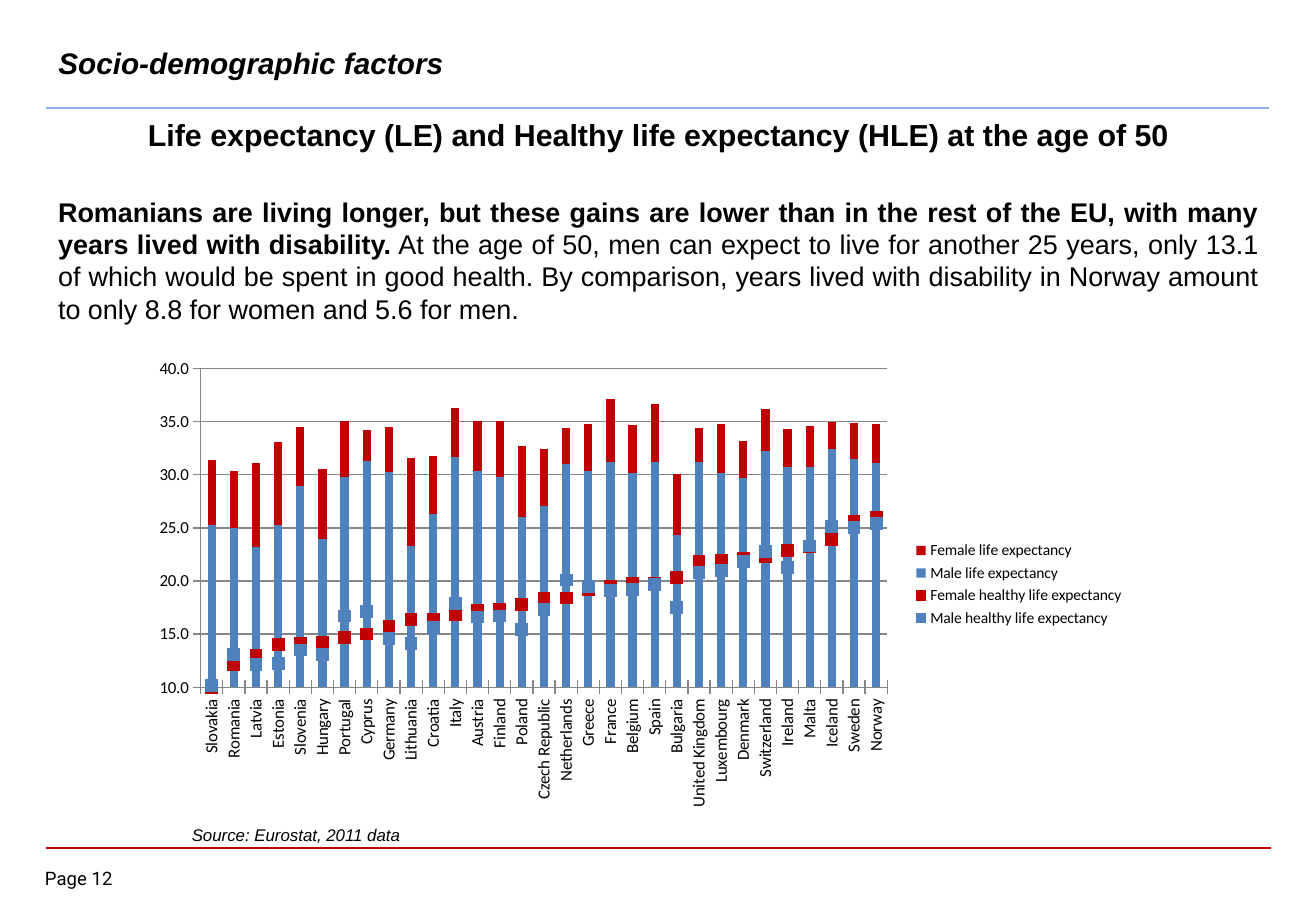
"""Slide on life expectancy and healthy life expectancy at the age of 50."""
from lxml import etree
from pptx import Presentation
from pptx import util as u
from pptx.chart.data import CategoryChartData
from pptx.dml.color import RGBColor
from pptx.enum import chart as ch
from pptx.enum import shapes, text
from pptx.oxml import parse_xml
from pptx.oxml.ns import nsdecls, qn

COLORS = {"black": "000000", "red": "C00000", "blue": "4F81BD",
          "rule": "8EB4E3", "grid": "868686"}

COUNTRIES = [
    "Slovakia", "Romania", "Latvia", "Estonia", "Slovenia", "Hungary", "Portugal",
    "Cyprus", "Germany", "Lithuania", "Croatia", "Italy", "Austria", "Finland",
    "Poland", "Czech Republic", "Netherlands", "Greece", "France", "Belgium",
    "Spain", "Bulgaria", "United Kingdom", "Luxembourg", "Denmark", "Switzerland",
    "Ireland", "Malta", "Iceland", "Sweden", "Norway"]

EXPECTANCY = {
    "Female life expectancy": [
        31.4, 30.4, 31.1, 33.1, 34.5, 30.5, 35.1, 34.2, 34.5, 31.6, 31.8,
        36.3, 35.1, 35.1, 32.7, 32.4, 34.4, 34.8, 37.1, 34.7, 36.7, 30.1,
        34.4, 34.8, 33.2, 36.2, 34.3, 34.6, 35, 34.9, 34.8],
    "Male life expectancy": [
        25.3, 25, 23.2, 25.3, 28.9, 24, 29.8, 31.3, 30.3, 23.3, 26.3,
        31.7, 30.4, 29.8, 26, 27.1, 31, 30.4, 31.2, 30.2, 31.2, 24.3,
        31.2, 30.2, 29.7, 32.2, 30.7, 30.7, 32.4, 31.5, 31.1],
    "Female healthy life expectancy": [
        10, 12.1, 13, 14, 14.1, 14.2, 14.7, 15, 15.7, 16.4, 16.4,
        16.8, 17.2, 17.3, 17.8, 18.4, 18.4, 19.2, 19.5, 19.8, 19.8, 20.3,
        21.8, 21.9, 22.1, 22.3, 22.9, 23.2, 23.9, 25.6, 26],
    "Male healthy life expectancy": [
        10.2, 13.1, 12.1, 12.2, 13.5, 13.1, 16.7, 17.1, 14.6, 14.1, 15.6,
        17.9, 16.6, 16.7, 15.4, 17.3, 20.1, 19.5, 19.1, 19.2, 19.7, 17.5,
        20.8, 21, 21.8, 22.8, 21.3, 23.3, 25.1, 25, 25.4]}


class SlideBuilder:
    """Holds the text style and the current slide."""

    def __init__(self, prs, font="Arial"):
        self.s = prs.slides.add_slide(prs.slide_layouts[5])
        self.font = font

    def color(self, name):
        return RGBColor.from_string(COLORS[name])

    def style(self, font, size, name=None, bold=False, italic=False):
        font.name, font.size = name or self.font, u.Pt(size)
        font.bold, font.italic = bold, italic
        font.color.rgb = self.color("black")

    def fill_text(self, sp, box, runs, size, align=text.PP_ALIGN.LEFT,
                  anchor=text.MSO_ANCHOR.TOP, name=None, italic=False, inset=None):
        sp.left, sp.top, sp.width, sp.height = map(u.Inches, box)
        tf = sp.text_frame
        tf.word_wrap, tf.auto_size = True, text.MSO_AUTO_SIZE.NONE
        tf.vertical_anchor = anchor
        if inset is not None:
            tf.margin_left = tf.margin_right = u.Inches(inset)
            tf.margin_top = tf.margin_bottom = u.Inches(inset)
        p = tf.paragraphs[0]
        p.alignment = align
        for words, bold in runs:
            r = p.add_run()
            r.text = words
            self.style(r.font, size, name, bold, italic)

    def title(self, box, words, size):
        self.fill_text(self.s.shapes.title, box, [(words, True)], size,
                       anchor=text.MSO_ANCHOR.MIDDLE, italic=True)

    def text_box(self, box, runs, size, **options):
        sp = self.s.shapes.add_textbox(*map(u.Inches, box))
        self.fill_text(sp, box, runs, size, **options)

    def rule(self, left, right, y, color, width):
        sp = self.s.shapes.add_connector(
            shapes.MSO_CONNECTOR.STRAIGHT,
            *map(u.Inches, (left, y, right, y)))
        sp.line.color.rgb, sp.line.width = self.color(color), u.Pt(width)
        etree.SubElement(sp._element.spPr, qn("a:effectLst"))

    def axis(self, axis):
        self.style(axis.tick_labels.font, 10, "Calibri")
        axis.major_tick_mark = ch.XL_TICK_MARK.CROSS
        axis.format.line.color.rgb = self.color("grid")

    def move_to_line_plot(self, chart, first):
        bars = chart.plots[0]._element
        lines = parse_xml(
            f'<c:lineChart {nsdecls("c")}><c:grouping val="standard"/>'
            '<c:varyColors val="0"/><c:marker val="1"/></c:lineChart>')
        marker = lines.find(qn("c:marker"))
        for ser in bars.findall(qn("c:ser"))[first:]:
            for invert in ser.findall(qn("c:invertIfNegative")):
                ser.remove(invert)
            marker.addprevious(ser)
        for ax in bars.findall(qn("c:axId")):
            etree.SubElement(lines, qn("c:axId"), val=ax.get("val"))
        bars.addnext(lines)

    def chart(self, box, categories, series, plot_area):
        data = CategoryChartData(number_format="#,##0.0")
        data.categories = categories
        for name, values in series.items():
            data.add_series(name, values)
        chart = self.s.shapes.add_chart(
            ch.XL_CHART_TYPE.COLUMN_CLUSTERED, *map(u.Inches, box), data).chart
        chart.has_title = False
        self.style(chart.font, 10, "Calibri")
        self.move_to_line_plot(chart, 2)

        columns, markers = chart.plots
        columns.gap_width, columns.overlap = 170, 100
        columns.vary_by_categories = False
        for ser, color in zip(columns.series, ("red", "blue")):
            ser.invert_if_negative = False
            ser.format.fill.solid()
            ser.format.fill.fore_color.rgb = self.color(color)
        for ser, color in zip(markers.series, ("red", "blue")):
            ser.smooth = False
            ser.format.line.fill.background()
            ser.marker.style, ser.marker.size = ch.XL_MARKER_STYLE.SQUARE, 7
            ser.marker.format.fill.solid()
            ser.marker.format.fill.fore_color.rgb = self.color(color)
            ser.marker.format.line.color.rgb = self.color(color)

        cat, val = chart.category_axis, chart.value_axis
        self.axis(cat)
        self.axis(val)
        cat.tick_label_position = ch.XL_TICK_LABEL_POSITION.LOW
        cat._element.find(qn("c:txPr")).find(qn("a:bodyPr")).set("rot", "-5400000")
        val.minimum_scale, val.maximum_scale, val.major_unit = 10, 40, 5
        val.tick_labels.number_format = "#,##0.0"
        val.tick_labels.number_format_is_linked = False
        val.major_gridlines.format.line.color.rgb = self.color("grid")

        chart.has_legend = True
        chart.legend.position = ch.XL_LEGEND_POSITION.RIGHT
        chart.legend.include_in_layout = False
        self.style(chart.legend.font, 9.2, "Calibri")
        self.place_plot(columns._element.getparent(), plot_area)

    def place_plot(self, area, fractions):
        for old in area.findall(qn("c:layout")):
            area.remove(old)
        layout = etree.Element(qn("c:layout"))
        manual = etree.SubElement(layout, qn("c:manualLayout"))
        settings = [("layoutTarget", "inner"), ("xMode", "edge"), ("yMode", "edge")]
        for tag, value in settings + list(zip("xywh", fractions)):
            etree.SubElement(manual, qn(f"c:{tag}"), val=str(value))
        area.insert(0, layout)


def main():
    prs = Presentation()
    prs.slide_width, prs.slide_height = u.Inches(10.83), u.Inches(7.5)
    s = SlideBuilder(prs)
    s.rule(0.38, 10.46, 6.98, "red", 1)
    s.rule(0.38, 10.44, 0.89, "rule", 1.5)
    s.title((0.38, 0.28, 7.65, 0.47), "Socio-demographic factors", 17.6)
    s.text_box((0.38, 0.91, 10.08, 0.4), [
        ("Life expectancy (LE) and Healthy life expectancy (HLE) at the age of 50", True)],
        18, align=text.PP_ALIGN.CENTER)
    s.text_box((0.38, 1.55, 10.08, 1.18), [
        ("Romanians are living longer, but these gains are lower than in the rest of "
         "the EU, with many years lived with disability.", True),
        (" At the age of 50, men can expect to live for another 25 years, only 13.1 of "
         "which would be spent in good health. By comparison, years lived with "
         "disability in Norway amount to only 8.8 for women and 5.6 for men.", False)],
        16, align=text.PP_ALIGN.JUSTIFY, anchor=text.MSO_ANCHOR.MIDDLE)
    s.chart((1.16, 2.88, 8.19, 3.86), COUNTRIES, EXPECTANCY, (0.06, 0.04, 0.69, 0.68))
    s.text_box((1.48, 6.74, 5.68, 0.27), [("Source: Eurostat, 2011 data", False)],
               10, italic=True)
    s.text_box((0.37, 7.14, 0.73, 0.22), [("Page 12", False)], 11,
               name="Roboto", inset=0)
    prs.save("out.pptx")


if __name__ == "__main__":
    main()
